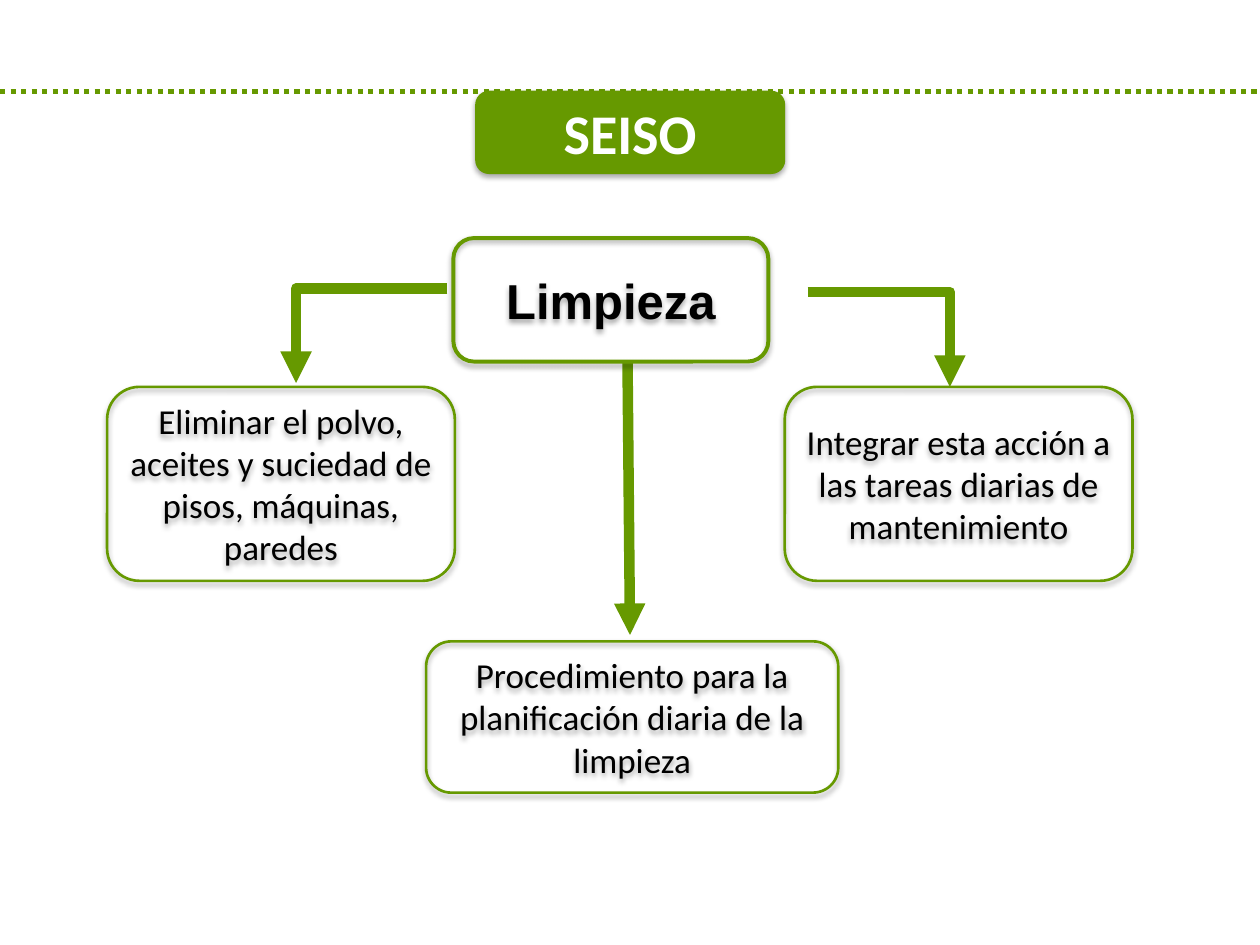
from dataclasses import dataclass

from lxml import etree
from pptx import Presentation
from pptx import util as u
from pptx.dml.color import RGBColor
from pptx.enum import dml, shapes, text
from pptx.oxml import parse_xml
from pptx.oxml.ns import nsdecls, qn


@dataclass(frozen=True)
class Theme:
    green: RGBColor = RGBColor(0x66, 0x99, 0x00)
    white: RGBColor = RGBColor(0xFF, 0xFF, 0xFF)
    black: RGBColor = RGBColor(0, 0, 0)
    body_font: str = "Calibri"
    topic_font: str = "Arial"
    title_size: int = 32
    topic_size: int = 28
    body_size: int = 20
    arrow_width: float = 6
    rule_width: float = 3
    topic_border: float = 2.25
    body_border: float = 1.5


SHADOW = (
    f'<a:outerShdw {nsdecls("a")} blurRad="40000" dist="23000" dir="5400000" rotWithShape="0">'
    '<a:srgbClr val="000000"><a:alpha val="35000"/></a:srgbClr></a:outerShdw>'
)


class Diagram:
    def __init__(self, slide, theme):
        self.s = slide
        self.theme = theme

    def line(self, start, end, width, kind=shapes.MSO_CONNECTOR.STRAIGHT):
        points = [u.Cm(v) for v in (*start, *end)]
        c = self.s.shapes.add_connector(kind, *points)
        c.line.color.rgb = self.theme.green
        c.line.width = u.Pt(width)
        etree.SubElement(c._element.spPr, qn("a:effectLst"))
        return c

    def rule(self, y, width):
        c = self.line((0, y), (width, y), self.theme.rule_width)
        c.line.dash_style = dml.MSO_LINE.ROUND_DOT

    def arrow(self, start, end, bent=False):
        """Draw an arrow; a bent one runs sideways first, then down."""
        kind = shapes.MSO_CONNECTOR.ELBOW if bent else shapes.MSO_CONNECTOR.STRAIGHT
        c = self.line(start, end, self.theme.arrow_width, kind)
        if bent:
            c._element.spPr.find(qn("a:prstGeom")).set("prst", "bentConnector2")
        etree.SubElement(c.line._get_or_add_ln(), qn("a:tailEnd"), type="triangle")

    def box(self, words, at, size, font=None, bold=False, border=None):
        """Draw a rounded box: outlined if a border is given, otherwise solid."""
        t = self.theme
        sp = self.s.shapes.add_shape(
            shapes.MSO_SHAPE.ROUNDED_RECTANGLE, *[u.Cm(v) for v in at])
        if border:
            sp.fill.background()
            sp.line.color.rgb = t.green
            sp.line.width = u.Pt(border)
        else:
            sp.fill.solid()
            sp.fill.fore_color.rgb = t.green
            sp.line.fill.background()
        sp.shadow.inherit = False
        sp._element.spPr.find(qn("a:effectLst")).append(parse_xml(SHADOW))

        tf = sp.text_frame
        tf.word_wrap = True
        tf.vertical_anchor = text.MSO_ANCHOR.MIDDLE
        p = tf.paragraphs[0]
        p.text = words
        p.alignment = text.PP_ALIGN.CENTER
        p.font.name = font or t.body_font
        p.font.size = u.Pt(size)
        p.font.bold = bold
        p.font.color.rgb = t.black if border else t.white


def main():
    prs = Presentation()
    prs.slide_width, prs.slide_height = u.Cm(25.4), u.Cm(19.05)
    theme = Theme()
    d = Diagram(prs.slides.add_slide(prs.slide_layouts[6]), theme)

    d.rule(1.85, 25.4)
    d.arrow((9.02, 5.82), (5.97, 7.72), bent=True)
    d.arrow((16.28, 5.89), (19.15, 7.8), bent=True)
    d.arrow((12.65, 7.29), (12.7, 12.8))

    d.box("SEISO", (9.58, 1.83, 6.25, 1.68), theme.title_size, bold=True)
    d.box("Limpieza", (9.14, 4.8, 6.35, 2.49), theme.topic_size,
          font=theme.topic_font, bold=True, border=theme.topic_border)

    actions = [
        ("Eliminar el polvo, aceites y suciedad de pisos, máquinas, paredes",
         (2.16, 7.8, 7.01, 3.91)),
        ("Integrar esta acción a las tareas diarias de mantenimiento",
         (15.82, 7.8, 7.01, 3.91)),
        ("Procedimiento para la planificación diaria de la limpieza",
         (8.59, 12.93, 8.31, 3.05)),
    ]
    for words, at in actions:
        d.box(words, at, theme.body_size, border=theme.body_border)

    prs.save("out.pptx")


if __name__ == "__main__":
    main()
